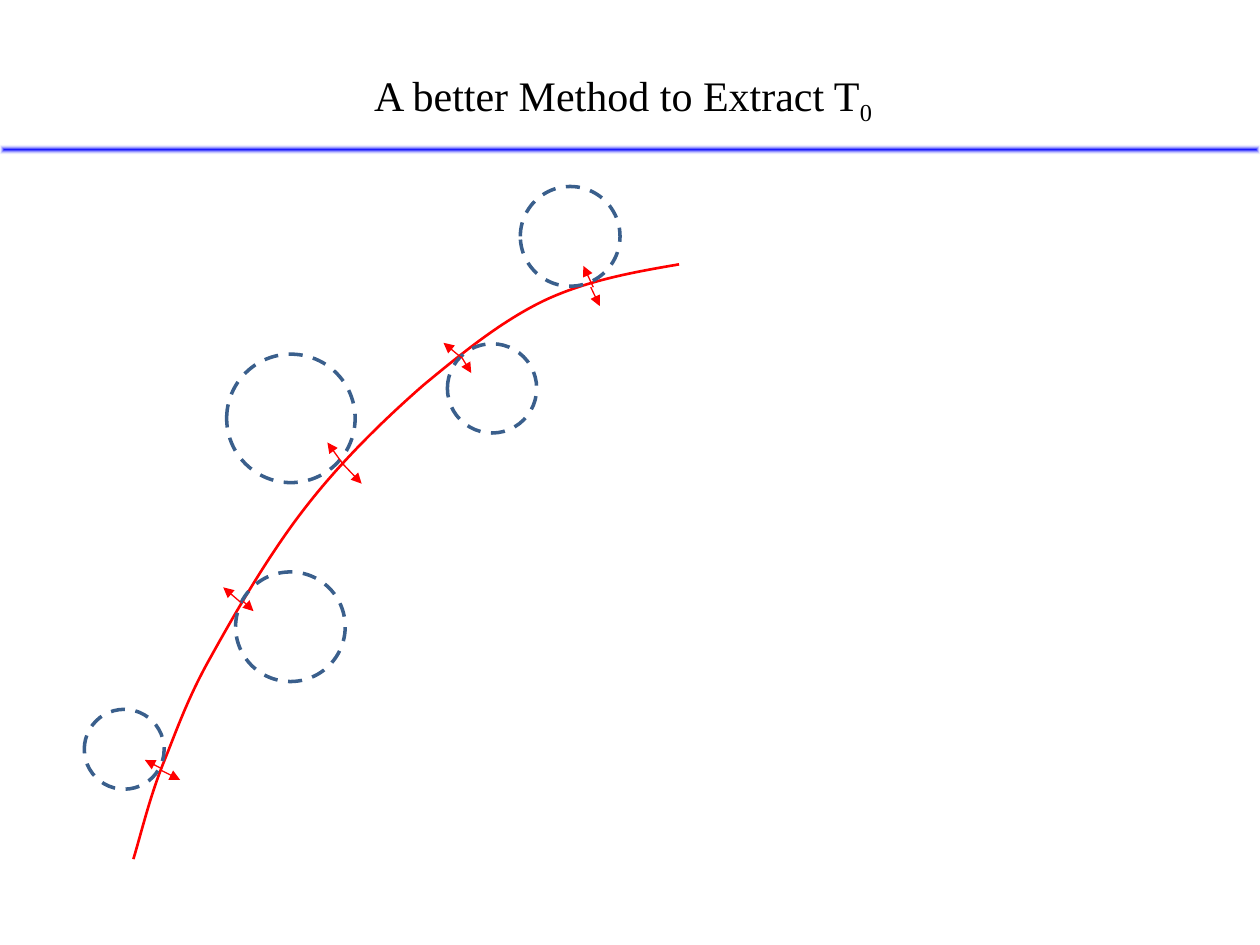
from dataclasses import dataclass

from lxml.etree import SubElement
from pptx import Presentation
from pptx.dml.color import RGBColor
from pptx.enum.dml import MSO_LINE
from pptx.enum.shapes import MSO_CONNECTOR, MSO_SHAPE
from pptx.enum.text import MSO_ANCHOR, PP_ALIGN
from pptx.oxml import parse_xml
from pptx.oxml.ns import nsdecls, qn
from pptx.util import Cm, Pt


@dataclass(frozen=True)
class Theme:
    font: str = "Times New Roman"
    title_size: float = 24
    text: str = "000000"
    bar: str = "0000FF"
    bar_edge: str = "FFFFFF"
    track: str = "FF0000"
    circle: str = "3A5F8C"
    track_width: float = 1.5
    circle_width: float = 2
    arrow_width: float = 0.75


TRACK_START = (2.69, 17.32)
TRACK_CURVES = [
    [(2.87, 16.71), (3.02, 16.08), (3.28, 15.42)],
    [(3.56, 14.73), (3.78, 14.07), (4.27, 13.21)],
    [(4.75, 12.34), (5.44, 11.15), (6.15, 10.24)],
    [(6.86, 9.32), (7.72, 8.48), (8.53, 7.77)],
    [(9.35, 7.09), (10.11, 6.48), (10.95, 6.07)],
    [(11.81, 5.66), (12.75, 5.49), (13.69, 5.33)],
]
DRIFT_CIRCLES = [
    (4.75, 11.53, 2.21),
    (1.7, 14.3, 1.61),
    (4.57, 7.14, 2.59),
    (9.02, 6.93, 1.8),
    (10.49, 3.76, 2.01),
]
INWARD_ARROWS = [
    (4.9, 12.12, 5.11, 12.32),
    (9.3, 7.19, 9.5, 7.52),
    (11.96, 5.79, 11.76, 5.36),
    (6.91, 9.35, 6.6, 8.92),
    (3.25, 15.49, 2.92, 15.32),
]
OUTWARD_ARROWS = [
    (9.3, 7.21, 8.94, 6.91),
    (11.91, 5.79, 12.09, 6.17),
    (4.85, 12.14, 4.5, 11.84),
    (6.91, 9.35, 7.29, 9.75),
    (3.23, 15.52, 3.63, 15.72),
]


class SlideBuilder:
    def __init__(self, slide, theme):
        self.slide = slide
        self.theme = theme

    def style_line(self, line, color, width):
        line.color.rgb = RGBColor.from_string(color)
        line.width = Pt(width)

    def title(self, text, subscript, left, top, width, height):
        shape = self.slide.shapes.title
        shape.left, shape.top = Cm(left), Cm(top)
        shape.width, shape.height = Cm(width), Cm(height)
        frame = shape.text_frame
        frame.word_wrap = False
        frame.vertical_anchor = MSO_ANCHOR.TOP
        paragraph = frame.paragraphs[0]
        paragraph.text = text
        paragraph.alignment = PP_ALIGN.LEFT
        paragraph.add_run().text = subscript
        for run in paragraph.runs:
            run.font.name = self.theme.font
            run.font.size = Pt(self.theme.title_size)
            run.font.color.rgb = RGBColor.from_string(self.theme.text)
        paragraph.runs[-1]._r.get_or_add_rPr().set("baseline", "-25000")

    def glowing_bar(self, left, top, width, height):
        shape = self.slide.shapes.add_shape(
            MSO_SHAPE.RECTANGLE, Cm(left), Cm(top), Cm(width), Cm(height)
        )
        shape.shadow.inherit = False
        shape.line.fill.background()
        gradient = parse_xml(
            f'<a:gradFill {nsdecls("a")} rotWithShape="1"><a:gsLst>'
            f'<a:gs pos="0"><a:srgbClr val="{self.theme.bar}"/></a:gs>'
            f'<a:gs pos="100000"><a:srgbClr val="{self.theme.bar_edge}">'
            '<a:alpha val="0"/></a:srgbClr></a:gs></a:gsLst>'
            '<a:path path="shape"><a:fillToRect l="50000" t="50000" '
            'r="50000" b="50000"/></a:path></a:gradFill>'
        )
        shape._element.spPr.find(qn("a:prstGeom")).addnext(gradient)

    def curve(self, start, segments):
        vertices = [(Cm(x), Cm(y)) for segment in segments for x, y in segment]
        builder = self.slide.shapes.build_freeform(Cm(start[0]), Cm(start[1]))
        builder.add_line_segments(vertices, close=False)
        shape = builder.convert_to_shape()
        shape.shadow.inherit = False
        shape.fill.background()
        self.style_line(shape.line, self.theme.track, self.theme.track_width)
        outline = next(shape._element.iter(qn("a:path")))
        straight_lines = outline.findall(qn("a:lnTo"))
        for index in range(0, len(straight_lines), 3):
            bezier = SubElement(outline, qn("a:cubicBezTo"))
            for straight_line in straight_lines[index:index + 3]:
                bezier.append(straight_line[0])
                outline.remove(straight_line)

    def dashed_circle(self, left, top, diameter):
        shape = self.slide.shapes.add_shape(
            MSO_SHAPE.OVAL, Cm(left), Cm(top), Cm(diameter), Cm(diameter)
        )
        shape.shadow.inherit = False
        shape.fill.background()
        self.style_line(shape.line, self.theme.circle, self.theme.circle_width)
        shape.line.dash_style = MSO_LINE.DASH

    def arrow_group(self, arrows):
        group = self.slide.shapes.add_group_shape()
        for arrow in arrows:
            connector = group.shapes.add_connector(
                MSO_CONNECTOR.STRAIGHT, *(Cm(value) for value in arrow)
            )
            self.style_line(
                connector.line, self.theme.track, self.theme.arrow_width
            )
            line = connector.line._get_or_add_ln()
            SubElement(line, qn("a:tailEnd")).set("type", "triangle")
            SubElement(connector._element.spPr, qn("a:effectLst"))


def main():
    presentation = Presentation()
    presentation.slide_width = Cm(25.4)
    presentation.slide_height = Cm(19.05)
    slide = presentation.slides.add_slide(presentation.slide_layouts[5])
    builder = SlideBuilder(slide, Theme())
    builder.glowing_bar(0, 2.92, 25.4, 0.2)
    builder.title("A better Method to Extract T", "0", 7.29, 1.27, 10.67, 1.27)
    builder.curve(TRACK_START, TRACK_CURVES)
    for circle in DRIFT_CIRCLES:
        builder.dashed_circle(*circle)
    for arrows in (INWARD_ARROWS, OUTWARD_ARROWS):
        builder.arrow_group(arrows)
    presentation.save("out.pptx")


if __name__ == "__main__":
    main()
